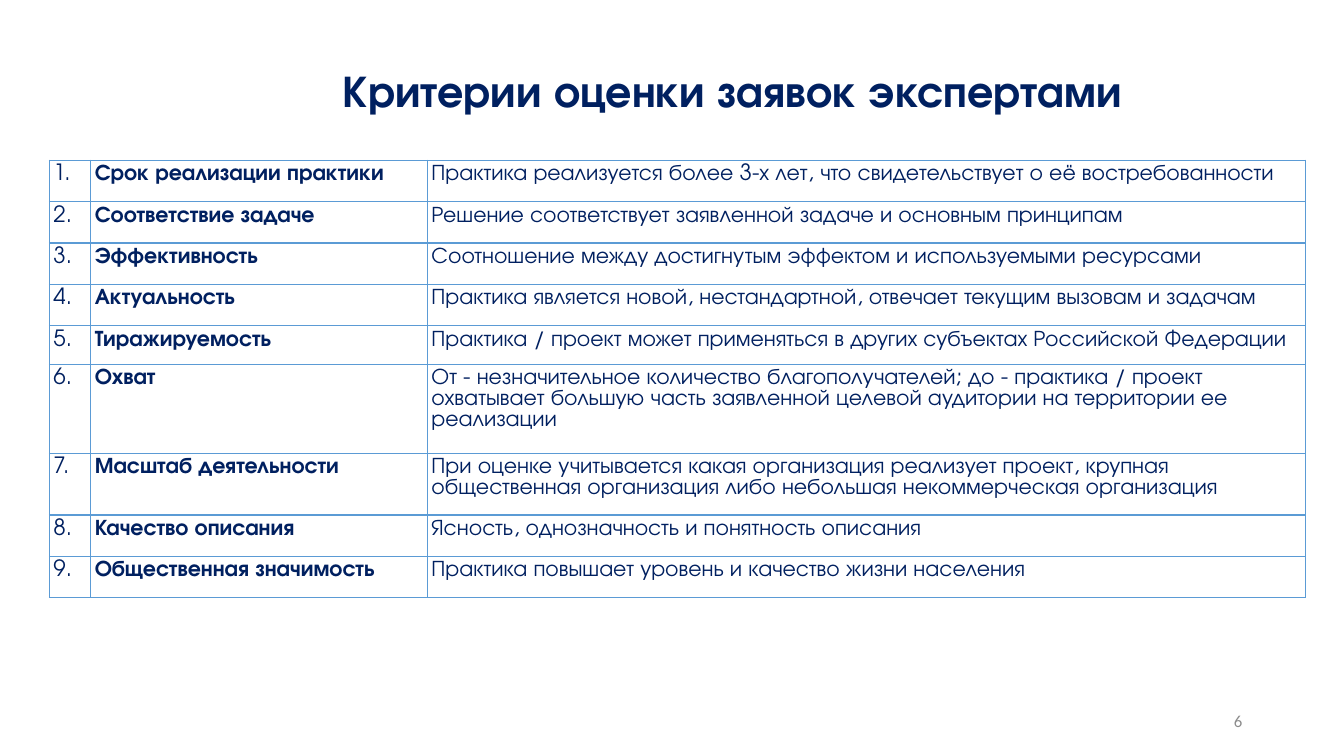
from lxml import etree
from pptx import Presentation, util as u
from pptx.dml.color import RGBColor
from pptx.enum import text
from pptx.oxml import ns

NAVY = RGBColor(0x00, 0x20, 0x60)
GREY = RGBColor(0x8C, 0x8C, 0x8C)
BORDER = RGBColor(0x5B, 0x9B, 0xD5)
HEADING_FONT = "TeX Gyre Adventor"
NUMBER_FONT = "Calibri"

CRITERIA = [
    ("Срок реализации практики", "Практика реализуется более 3-х лет, что свидетельствует о её востребованности"),
    ("Соответствие задаче", "Решение соответствует заявленной задаче и основным принципам"),
    ("Эффективность", "Соотношение между достигнутым эффектом и используемыми ресурсами"),
    ("Актуальность", "Практика является новой, нестандартной, отвечает текущим вызовам и задачам"),
    ("Тиражируемость", "Практика / проект может применяться в других субъектах Российской Федерации"),
    ("Охват", "От - незначительное количество благополучателей; до - практика / проект охватывает большую часть заявленной целевой аудитории на территории ее реализации"),
    ("Масштаб деятельности", "При оценке учитывается какая организация реализует проект, крупная общественная организация либо небольшая некоммерческая организация"),
    ("Качество описания", "Ясность, однозначность и понятность описания"),
    ("Общественная значимость", "Практика повышает уровень и качество жизни населения"),
]
COLUMN_WIDTHS = [0.41, 3.34, 8.71]
ROW_HEIGHT = 0.41
SPECIAL_HEIGHTS = {4: 0.33, 5: 0.7, 6: 0.51}


def write(frame, content, size=16, font=HEADING_FONT, color=NAVY, bold=False,
          align=text.PP_ALIGN.LEFT, line_spacing=None, space_after=0):
    frame.word_wrap = True
    paragraph = frame.paragraphs[0]
    paragraph.alignment = align
    paragraph.line_spacing = line_spacing
    paragraph.space_before = u.Pt(0)
    paragraph.space_after = u.Pt(space_after)
    run = paragraph.add_run()
    run.text = content
    run.font.size = u.Pt(size)
    run.font.name = font
    run.font.bold = bold
    run.font.color.rgb = color


presentation = Presentation()
presentation.slide_width = u.Inches(13.33)
presentation.slide_height = u.Inches(7.5)
slide = presentation.slides.add_slide(presentation.slide_layouts[6])

number_box = slide.shapes.add_textbox(u.Inches(9.42), u.Inches(6.95), u.Inches(3), u.Inches(0.4))
number_box.text_frame.vertical_anchor = text.MSO_ANCHOR.MIDDLE
write(number_box.text_frame, "6", size=12, font=NUMBER_FONT, color=GREY, align=text.PP_ALIGN.RIGHT)

row_heights = [SPECIAL_HEIGHTS.get(index, ROW_HEIGHT) for index in range(len(CRITERIA))]
table_frame = slide.shapes.add_table(
    len(CRITERIA), len(COLUMN_WIDTHS), u.Inches(0.49), u.Inches(1.59),
    u.Inches(sum(COLUMN_WIDTHS)), u.Inches(sum(row_heights)))
table = table_frame.table
table.first_row = False
table.horz_banding = False
for column, width in zip(table.columns, COLUMN_WIDTHS):
    column.width = u.Inches(width)

for index, (criterion, height) in enumerate(zip(CRITERIA, row_heights)):
    row = table.rows[index]
    row.height = u.Inches(height)
    for position, content in enumerate((f"{index + 1}.", *criterion)):
        cell = row.cells[position]
        cell.margin_left = cell.margin_right = cell.margin_top = u.Inches(0.04)
        cell.margin_bottom = u.Inches(0.08 if position == 0 else 0.04)
        cell.vertical_anchor = text.MSO_ANCHOR.TOP
        write(cell.text_frame, content, bold=position == 1, space_after=6)
        properties = cell._tc.get_or_add_tcPr()
        for side in ("lnL", "lnR", "lnT", "lnB"):
            line = etree.SubElement(properties, ns.qn(f"a:{side}"), w=str(u.Pt(1)))
            fill = etree.SubElement(line, ns.qn("a:solidFill"))
            etree.SubElement(fill, ns.qn("a:srgbClr"), val=str(BORDER))
        cell.fill.background()

title_box = slide.shapes.add_textbox(u.Inches(2.72), u.Inches(0.18), u.Inches(9.09), u.Inches(1.03))
title_box.text_frame.vertical_anchor = text.MSO_ANCHOR.BOTTOM
write(title_box.text_frame, "Критерии оценки заявок экспертами", size=32, bold=True,
      align=text.PP_ALIGN.CENTER, line_spacing=0.9)

presentation.save("out.pptx")
